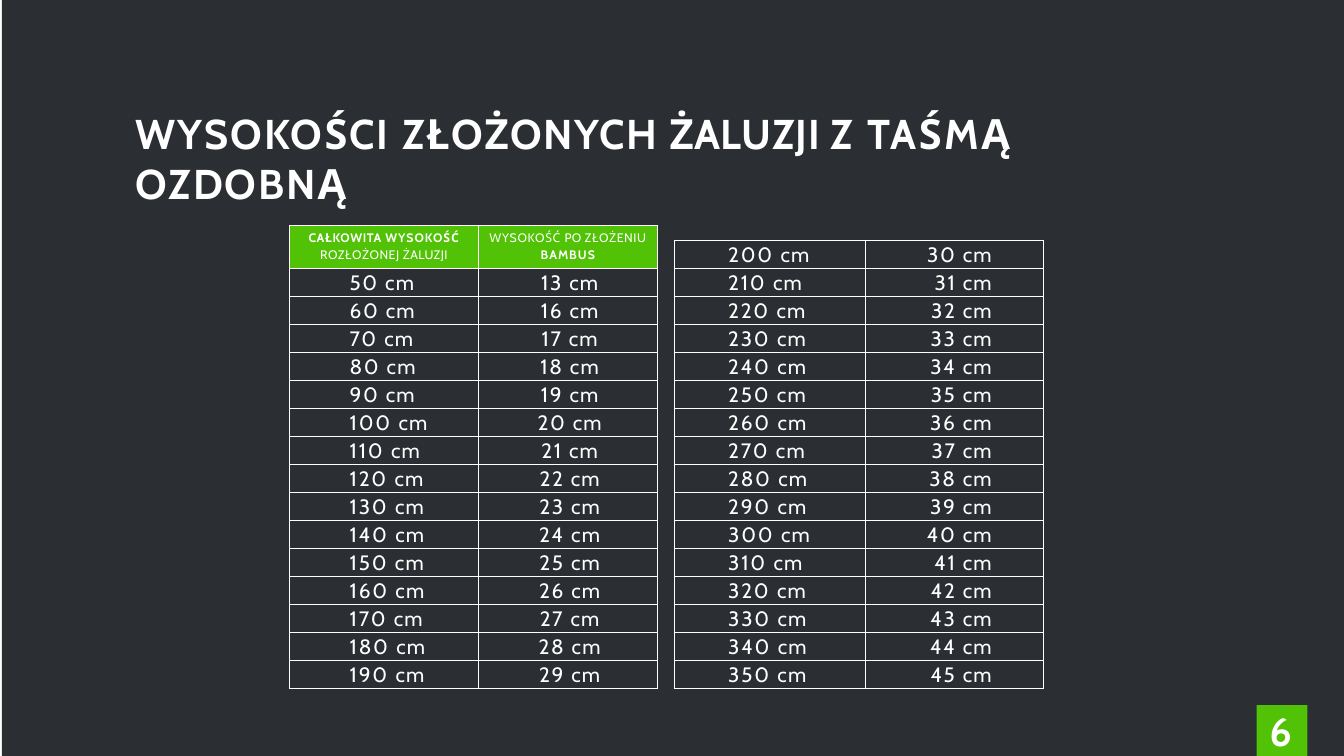
from lxml import etree
from pptx import Presentation
from pptx.dml.color import RGBColor
from pptx.enum.shapes import MSO_SHAPE
from pptx.enum.text import MSO_ANCHOR, MSO_AUTO_SIZE, PP_ALIGN
from pptx.oxml.ns import qn
from pptx.util import Cm, Pt

RECTANGLE = MSO_SHAPE.RECTANGLE
TOP = MSO_ANCHOR.TOP
GROW = MSO_AUTO_SIZE.SHAPE_TO_FIT_TEXT
LEFT, CENTER, RIGHT = PP_ALIGN.LEFT, PP_ALIGN.CENTER, PP_ALIGN.RIGHT

DARK, GREEN, WHITE = "2B2F33", "52C206", "FFFFFF"
FONT = "Cabin"
WIDTH, HEIGHT = Cm(55.85), Cm(31.42)
ROW_HEIGHT = Cm(18.62) // 16
HEADER_HEIGHT = Cm(1.8)
CELL_SIZE, HEADER_SIZE = 24.5, 14.5

# Runs are (text, letter spacing in points, bold)
TITLE = [
    ("WYSOKOŚCI ", 2.4, True), ("ZŁOŻONYCH ", 1.8, True), ("ŻALUZJI ", 0.8, True),
    ("Z ", 2.5, True), ("TAŚMĄ ", 2.9, True), ("OZDOBNĄ", 2.2, True),
]
HEADERS = [
    [[("CAŁKOWITA ", 0.7, True), ("WYSOKOŚĆ", 1.1, True)],
     [("ROZŁOŻONEJ ", 0.6, False), ("ŻALUZJI", 0.4, False)]],
    [[("WYSOKOŚĆ ", 0.8, False), ("PO ", 0.3, False), ("ZŁOŻENIU", 0.7, False)],
     [("BAMBUS", 1.2, True)]],
]
OPEN_HEIGHTS = range(50, 351, 10)
FOLDED_HEIGHTS = [13, *range(16, 46)]
LEFT_ROWS = 15


def color(value):
    return RGBColor.from_string(value)


def set_format(target, values):
    for name, value in values.items():
        setattr(target, name, value)


def fill_solid(target, value):
    target.fill.solid()
    target.fill.fore_color.rgb = color(value)


def write_runs(paragraph, runs, size, indent=0, **values):
    properties = paragraph._p.get_or_add_pPr()
    properties.set("marL", str(Cm(indent)))
    properties.set("indent", "0")
    set_format(paragraph, values)
    for text, spacing, bold in runs:
        run = paragraph.add_run()
        run.text = text
        set_format(run.font, {"name": FONT, "size": Pt(size), "bold": bold})
        run.font.color.rgb = color(WHITE)
        run.font._element.set("spc", str(round(spacing * 100)))


def add_rectangle(slide, left, top, width, height, fill):
    shape = slide.shapes.add_shape(RECTANGLE, left, top, width, height)
    shape.shadow.inherit = False
    fill_solid(shape, fill)
    shape.line.fill.background()
    return shape


def format_frame(frame, top=0):
    set_format(frame, {
        "margin_left": 0, "margin_right": 0, "margin_top": Cm(top), "margin_bottom": 0,
        "word_wrap": True, "vertical_anchor": TOP, "auto_size": GROW,
    })


def format_cell(cell, fill, top, right=0):
    set_format(cell, {
        "margin_left": 0, "margin_right": Cm(right), "margin_top": Cm(top),
        "margin_bottom": 0, "vertical_anchor": TOP,
    })
    properties = cell._tc.get_or_add_tcPr()
    for side in ("lnL", "lnR", "lnT", "lnB"):
        line = etree.SubElement(properties, qn(f"a:{side}"), w=str(Pt(1)))
        solid = etree.SubElement(line, qn("a:solidFill"))
        etree.SubElement(solid, qn("a:srgbClr"), val=WHITE)
    fill_solid(cell, fill)


def add_grid(slide, left, top, widths, row_count):
    frame = slide.shapes.add_table(row_count, len(widths), Cm(left), Cm(top),
                                   Cm(sum(widths)), ROW_HEIGHT * row_count)
    table = frame.table
    set_format(table, {"first_row": False, "horz_banding": False})
    for column, width in zip(table.columns, widths):
        column.width = Cm(width)
    for row in table.rows:
        row.height = ROW_HEIGHT
    return table


def write_header(table):
    table.rows[0].height = HEADER_HEIGHT
    for column, lines in enumerate(HEADERS):
        cell = table.cell(0, column)
        format_cell(cell, GREEN, 0.2)
        frame = cell.text_frame
        write_runs(frame.paragraphs[0], lines[0], HEADER_SIZE, alignment=CENTER)
        write_runs(frame.add_paragraph(), lines[1], HEADER_SIZE,
                   alignment=CENTER, space_before=Pt(2.9))


def write_heights(table, first_row, pairs, layouts):
    """Fill rows with height pairs; layouts hold (alignment, indent, right margin)."""
    for row, pair in enumerate(pairs, first_row):
        for column, (number, layout) in enumerate(zip(pair, layouts)):
            alignment, indent, right = layout
            cell = table.cell(row, column)
            format_cell(cell, DARK, 0.08, right)
            runs = [(f"{number} ", 2.1 if number >= 100 else 1.9, False),
                    ("cm", 1.4, False)]
            write_runs(cell.text_frame.paragraphs[0], runs, CELL_SIZE, indent,
                       alignment=alignment)


def add_title(slide):
    title = slide.shapes.title
    set_format(title, {"left": Cm(5.61), "top": Cm(4.45),
                       "width": Cm(44.63), "height": Cm(2.13)})
    format_frame(title.text_frame, 0.03)
    write_runs(title.text_frame.paragraphs[0], TITLE, 49, 0.03,
               alignment=LEFT, line_spacing=1.0)


def add_page_number(slide):
    side = Cm(2.11)
    add_rectangle(slide, Cm(52.22), HEIGHT - side, side, side, GREEN)
    box = slide.shapes.add_textbox(Cm(52.65), Cm(29.41), Cm(1.17), Cm(2.01))
    format_frame(box.text_frame)
    write_runs(box.text_frame.paragraphs[0], [("6", -0.1, True)], 47, 0.1,
               alignment=LEFT, line_spacing=Pt(54.7))


def main():
    presentation = Presentation()
    set_format(presentation, {"slide_width": WIDTH, "slide_height": HEIGHT})
    slide = presentation.slides.add_slide(presentation.slide_layouts[5])
    margin = Cm(0.08)
    backdrop = add_rectangle(slide, margin, 0, WIDTH - margin, HEIGHT, DARK)
    slide.shapes._spTree.insert(2, backdrop._element)
    add_title(slide)

    pairs = list(zip(OPEN_HEIGHTS, FOLDED_HEIGHTS))
    left_pairs, right_pairs = pairs[:LEFT_ROWS], pairs[LEFT_ROWS:]
    right_table = add_grid(slide, 28.02, 10.01, [7.95, 7.37], len(right_pairs))
    write_heights(right_table, 0, right_pairs, [(LEFT, 2.24, 0), (RIGHT, 0, 2.13)])
    left_table = add_grid(slide, 12.04, 9.37, [7.82, 7.47], LEFT_ROWS + 1)
    write_header(left_table)
    write_heights(left_table, 1, left_pairs, [(LEFT, 2.49, 0), (CENTER, 0.15, 0)])

    add_page_number(slide)
    presentation.save("out.pptx")


if __name__ == "__main__":
    main()
